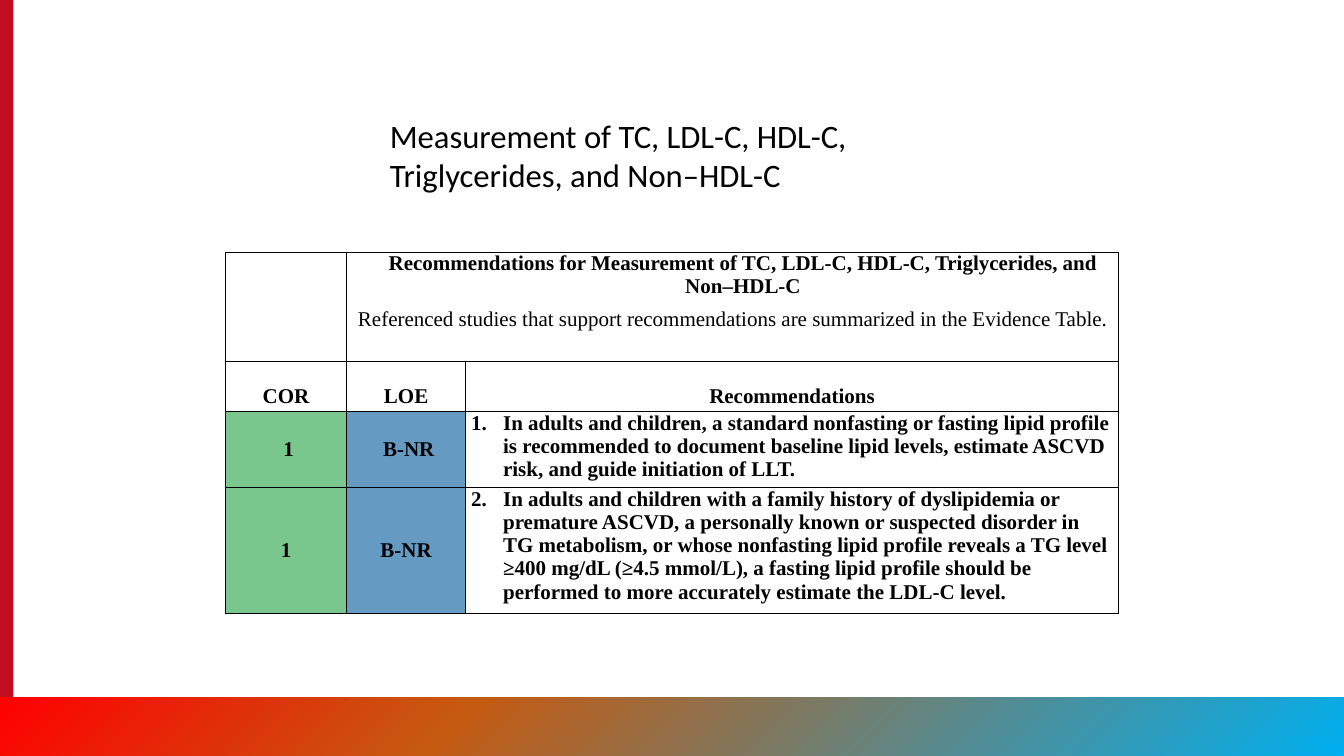
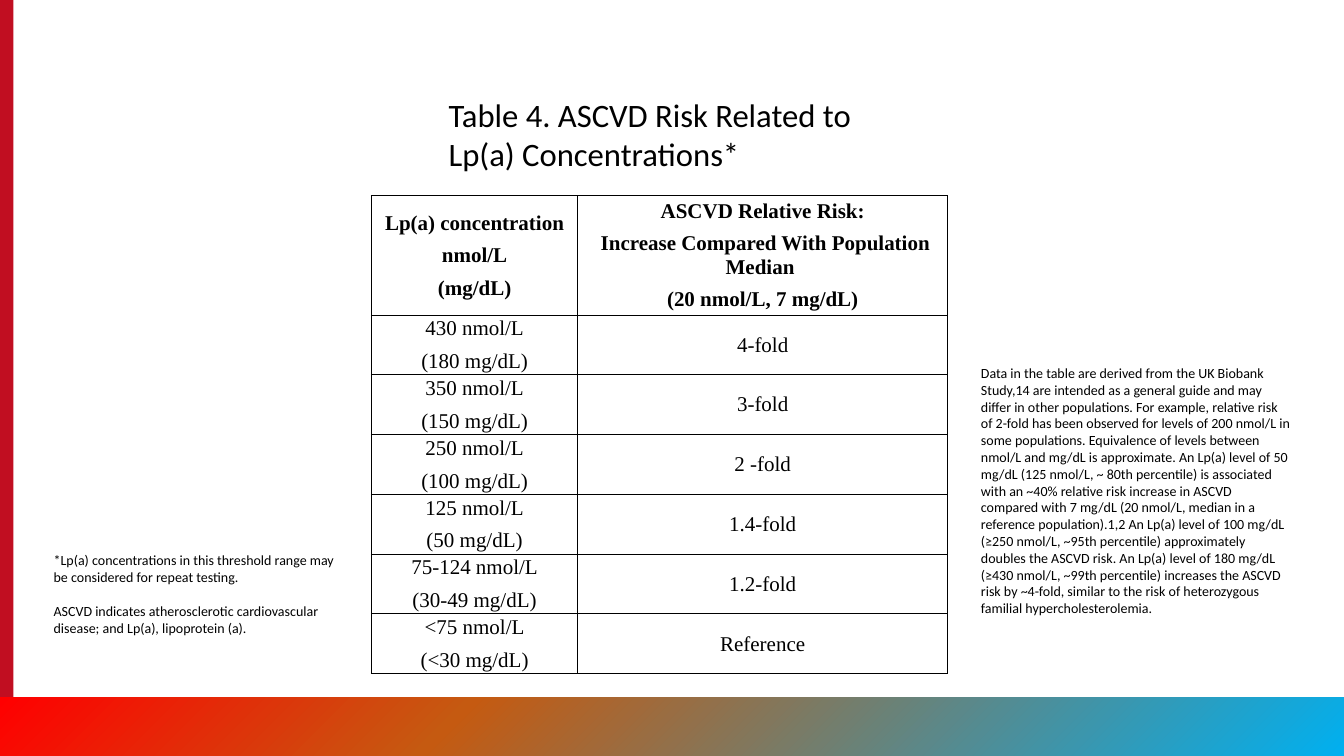
import copy
import pptx
import pptx.dml.color
import pptx.enum.shapes
import pptx.enum.text
import pptx.oxml
import pptx.oxml.ns
import pptx.util

Inches = pptx.util.Inches
Align = pptx.enum.text.PP_ALIGN
Anchor = pptx.enum.text.MSO_ANCHOR
qn = pptx.oxml.ns.qn
COLORS = {
    "text": "000000",
    "side": "C10E21",
    "blue": "00B0F0",
    "orange": "C55A11",
    "red": "FF0000",
    "class_green": "79C78D",
    "level_blue": "659BC2",
}
RGB = {name: pptx.dml.color.RGBColor.from_string(value) for name, value in COLORS.items()}


def write_lines(frame, lines, font, size, after=8, bold=False, align=Align.LEFT):
    frame.word_wrap = True
    for index, line in enumerate(lines):
        para = frame.paragraphs[0] if index == 0 else frame.add_paragraph()
        para.alignment = align
        para.space_after = pptx.util.Pt(after)
        span = para.add_run()
        span.text = line
        span.font.name = font
        span.font.size = pptx.util.Pt(size)
        span.font.bold = bold
        span.font.color.rgb = RGB["text"]


def add_grid(page, left, top, widths, heights, rows, bold_rows):
    frame = page.shapes.add_table(
        len(rows), len(widths), Inches(left), Inches(top), Inches(sum(widths)), Inches(sum(heights)))
    table = frame.table
    table.first_row = False
    table.horz_banding = False
    for column, width in zip(table.columns, widths):
        column.width = Inches(width)
    for row, height in zip(table.rows, heights):
        row.height = Inches(height)
    for row_index, row in enumerate(rows):
        for column_index, lines in enumerate(row):
            cell = table.cell(row_index, column_index)
            cell.margin_left = cell.margin_right = Inches(0.07)
            cell.margin_top = cell.margin_bottom = 0
            cell.vertical_anchor = Anchor.MIDDLE
            cell.fill.background()
            write_lines(cell.text_frame, lines, "Times New Roman", 18,
                        bold=row_index < bold_rows, align=Align.CENTER)
            properties = cell._tc.get_or_add_tcPr()
            for position, side in enumerate(("lnL", "lnR", "lnT", "lnB")):
                properties.insert(position, pptx.oxml.parse_xml(
                    f'<a:{side} {pptx.oxml.ns.nsdecls("a")} w="12700"><a:solidFill>'
                    f'<a:srgbClr val="{COLORS["text"]}"/></a:solidFill></a:{side}>'))
    return table


deck = pptx.Presentation()
deck.slide_width = Inches(16)
deck.slide_height = Inches(9)
layout = deck.slide_layouts[5]

titles = [
    ("Measurement of TC, LDL-C, HDL-C, Triglycerides, and Non–HDL-C", 4.54, 1.33, 6.92),
    ("Table 4. ASCVD Risk Related to Lp(a) Concentrations*", 5.24, 1.08, 5.52),
]
pages = []
for text, left, top, width in titles:
    page = deck.slides.add_slide(layout)
    title = page.shapes.title
    title.left, title.top = Inches(left), Inches(top)
    title.width, title.height = Inches(width), Inches(1.04)
    title.text_frame.vertical_anchor = Anchor.TOP
    title.text_frame.auto_size = pptx.enum.text.MSO_AUTO_SIZE.SHAPE_TO_FIT_TEXT
    write_lines(title.text_frame, [text], "Calibri", 28)
    pages.append(page)
measurement_page, risk_page = pages

bands = []
for left, top, width, height in [(0, 0, 0.16, 9), (0, 8.3, 16, 0.7)]:
    band = measurement_page.shapes.add_shape(
        pptx.enum.shapes.MSO_SHAPE.RECTANGLE, Inches(left), Inches(top), Inches(width), Inches(height))
    band.shadow.inherit = False
    band.line.fill.background()
    bands.append(band)
side_band, bottom_band = bands
side_band.fill.solid()
side_band.fill.fore_color.rgb = RGB["side"]
bottom_band.rotation = 180
bottom_band.fill.gradient()
bottom_band.fill.gradient_angle = 315
stop_list = bottom_band.element.find(".//" + qn("a:gsLst"))
stop_list.append(copy.deepcopy(stop_list[0]))
stops = [(0, "blue"), (0.66, "orange"), (1, "red")]
for stop, (position, name) in zip(bottom_band.fill.gradient_stops, stops):
    stop.position = position
    stop.color.rgb = RGB[name]
for index, band in enumerate(bands):
    band.element.nvSpPr.cNvPr.set("id", str(20 + index))
    layout.shapes.element.insert(2 + index, band.element)

recommendation_rows = [
    [[], ["Recommendations for Measurement of TC, LDL-C, HDL-C, Triglycerides, and Non–HDL-C",
          "Referenced studies that support recommendations are summarized in the Evidence Table."], []],
    [["COR"], ["LOE"], ["Recommendations"]],
    [[" 1"], [" B-NR"],
     ["In adults and children, a standard nonfasting or fasting lipid profile is recommended to document "
      "baseline lipid levels, estimate ASCVD risk, and guide initiation of LLT."]],
    [["1"], ["B-NR"],
     ["In adults and children with a family history of dyslipidemia or premature ASCVD, a personally known "
      "or suspected disorder in TG metabolism, or whose nonfasting lipid profile reveals a TG level "
      "≥400 mg/dL (≥4.5 mmol/L), a fasting lipid profile should be performed to more accurately "
      "estimate the LDL-C level."]],
]
table = add_grid(measurement_page, 2.68, 3, [1.45, 1.41, 7.78], [1.3, 0.44, 0.87, 1.38],
                 recommendation_rows, bold_rows=4)
heading = table.cell(0, 1)
heading.merge(table.cell(0, 2))
heading.vertical_anchor = Anchor.TOP
heading_para, reference_para = heading.text_frame.paragraphs
heading_para._p.get_or_add_pPr().set("marL", str(Inches(0.24)))
reference_para.runs[0].font.bold = False
for column_index in range(3):
    cell = table.cell(1, column_index)
    cell.vertical_anchor = Anchor.TOP
    cell.text_frame.paragraphs[0].line_spacing = 2.0
for number, row_index in enumerate((2, 3), start=1):
    for column_index, name in enumerate(("class_green", "level_blue")):
        cell = table.cell(row_index, column_index)
        cell.fill.solid()
        cell.fill.fore_color.rgb = RGB[name]
    cell = table.cell(row_index, 2)
    cell.vertical_anchor = Anchor.TOP
    para = cell.text_frame.paragraphs[0]
    para.alignment = Align.LEFT
    properties = para._p.get_or_add_pPr()
    properties.set("marL", str(Inches(0.38)))
    properties.set("indent", str(-Inches(0.38)))
    properties.append(pptx.oxml.parse_xml(
        f'<a:buAutoNum {pptx.oxml.ns.nsdecls("a")} type="arabicPeriod" startAt="{number}"/>'))

risk_rows = [
    [["Lp(a) concentration", "nmol/L", "(mg/dL)"],
     ["ASCVD Relative Risk:", " Increase Compared With Population Median ", "(20 nmol/L, 7 mg/dL)"]],
    [["430 nmol/L", "(180 mg/dL)"], ["4-fold"]],
    [["350 nmol/L", "(150 mg/dL)"], ["3-fold"]],
    [["250 nmol/L", "(100 mg/dL)"], ["2 -fold"]],
    [["125 nmol/L", "(50 mg/dL)"], ["1.4-fold"]],
    [["75-124 nmol/L", "(30-49 mg/dL)"], ["1.2-fold"]],
    [["<75 nmol/L", "(<30 mg/dL)"], ["Reference"]],
]
add_grid(risk_page, 4.42, 2.33, [2.46, 4.4], [0.79] + [0.5] * 6, risk_rows, bold_rows=1)

notes = [
    (11.58, 4.29, 3.9, 3.74, 0, [
        "Data in the table are derived from the UK Biobank Study,14 are intended as a general guide and may "
        "differ in other populations. For example, relative risk of 2-fold has been observed for levels of "
        "200 nmol/L in some populations. Equivalence of levels between nmol/L and mg/dL is approximate. "
        "An Lp(a) level of 50 mg/dL (125 nmol/L, ~ 80th percentile) is associated with an ~40% relative risk "
        "increase in ASCVD compared with 7 mg/dL (20 nmol/L, median in a reference population).1,2 An Lp(a) "
        "level of 100 mg/dL (≥250 nmol/L, ~95th percentile) approximately doubles the ASCVD risk. An Lp(a) "
        "level of 180 mg/dL (≥430 nmol/L, ~99th percentile) increases the ASCVD risk by ~4-fold, similar to "
        "the risk of heterozygous familial hypercholesterolemia."]),
    (0.54, 6.52, 3.58, 1.5, 14.6, [
        "*Lp(a) concentrations in this threshold range may be considered for repeat testing.",
        "ASCVD indicates atherosclerotic cardiovascular disease; and Lp(a), lipoprotein (a)."]),
]
for left, top, width, height, after, lines in notes:
    box = risk_page.shapes.add_textbox(Inches(left), Inches(top), Inches(width), Inches(height))
    write_lines(box.text_frame, lines, "Calibri", 12, after=after)

deck.save("out.pptx")
